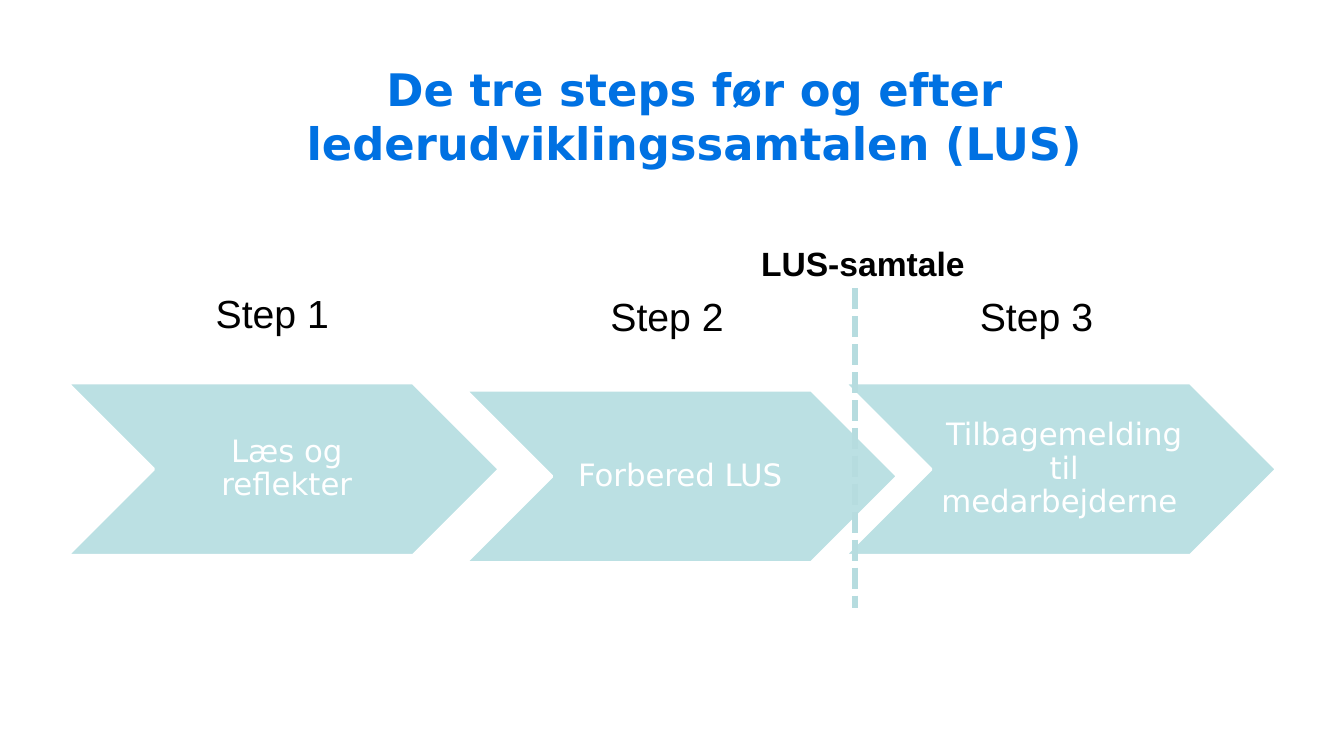
from lxml import etree
from pptx import Presentation
from pptx.dml.color import RGBColor
from pptx.enum.dml import MSO_LINE
from pptx.enum.shapes import MSO_CONNECTOR, MSO_SHAPE
from pptx.enum.text import MSO_ANCHOR, PP_ALIGN
from pptx.oxml.ns import qn
from pptx.util import Inches, Pt

CENTER, LEFT = PP_ALIGN.CENTER, PP_ALIGN.LEFT
MIDDLE, TOP = MSO_ANCHOR.MIDDLE, MSO_ANCHOR.TOP
CHEVRON = MSO_SHAPE.CHEVRON
STRAIGHT = MSO_CONNECTOR.STRAIGHT
SYS_DASH = MSO_LINE.SQUARE_DOT

COLORS = {
    "title": "0071E2",
    "chevron": "BBE0E3",
    "divider": "B6DCDF",
    "white": "FFFFFF",
    "black": "000000",
}
HEAD_FONT, LABEL_FONT = "DejaVu Sans", "Arial"
CHEVRON_W, CHEVRON_H = 4.28, 1.71

# heading, heading box, chevron text, chevron left and top
STEPS = [
    ("Step 1 ", (1.23, 2.82, 3.05, 0.57), "Læs og reflekter", (0.67, 3.8)),
    ("Step 2 ", (5.4, 2.85, 2.54, 0.57), "Forbered LUS ", (4.62, 3.87)),
    ("Step 3", (9.01, 2.85, 2.54, 0.57), "Tilbagemelding til medarbejderne ", (8.38, 3.8)),
]


def rgb(name):
    return RGBColor.from_string(COLORS[name])


def write(sp, text, size, font, color, bold=False, align=CENTER, anchor=TOP):
    """Fill a shape with one formatted paragraph and return the paragraph."""
    tf = sp.text_frame
    tf.word_wrap = True
    tf.vertical_anchor = anchor
    p = tf.paragraphs[0]
    p.text = text
    p.alignment = align
    r = p.runs[0]
    r.font.size = Pt(size)
    r.font.name = font
    r.font.bold = bold
    r.font.color.rgb = rgb(color)
    return p


def add_text(slide, box, *args, **kwargs):
    sp = slide.shapes.add_textbox(*map(Inches, box))
    write(sp, *args, **kwargs)


def add_step(slide, heading, heading_box, text, corner):
    """Place a step's chevron and the heading above it."""
    sp = slide.shapes.add_shape(
        CHEVRON, *map(Inches, (*corner, CHEVRON_W, CHEVRON_H)))
    sp.shadow.inherit = False
    sp.fill.solid()
    sp.fill.fore_color.rgb = rgb("chevron")
    sp.line.color.rgb = rgb("white")
    sp.line.width = Pt(2)
    p = write(sp, text, 22, HEAD_FONT, "white", anchor=MIDDLE)
    p.line_spacing = 0.9
    tf = sp.text_frame
    tf.margin_left = Inches(0.1)
    tf.margin_top = tf.margin_right = tf.margin_bottom = Inches(0.03)
    add_text(slide, heading_box, heading, 28, LABEL_FONT, "black")


def add_meeting_marker(slide, x, top, bottom):
    """Draw the dashed divider with its label above."""
    add_text(slide, (x - 1.03, top - 0.5, 2.33, 0.5), "LUS-samtale", 24,
             LABEL_FONT, "black", bold=True, align=LEFT)
    line = slide.shapes.add_connector(
        STRAIGHT, *map(Inches, (x, top, x, bottom)))
    line.line.color.rgb = rgb("divider")
    line.line.width = Pt(5)
    line.line.dash_style = SYS_DASH
    etree.SubElement(line._element.spPr, qn("a:effectLst"))


def main():
    prs = Presentation()
    prs.slide_width, prs.slide_height = Inches(13.33), Inches(7.5)
    slide = prs.slides.add_slide(prs.slide_layouts[6])
    slide.background.fill.solid()
    slide.background.fill.fore_color.rgb = rgb("white")
    add_text(slide, (0.89, 0.52, 12, 1.25),
             "De tre steps før og efter lederudviklingssamtalen (LUS)", 32,
             HEAD_FONT, "title", bold=True, anchor=MIDDLE)
    for step in STEPS:
        add_step(slide, *step)
    add_meeting_marker(slide, 8.48, 2.86, 6.03)
    prs.save("out.pptx")


if __name__ == "__main__":
    main()
